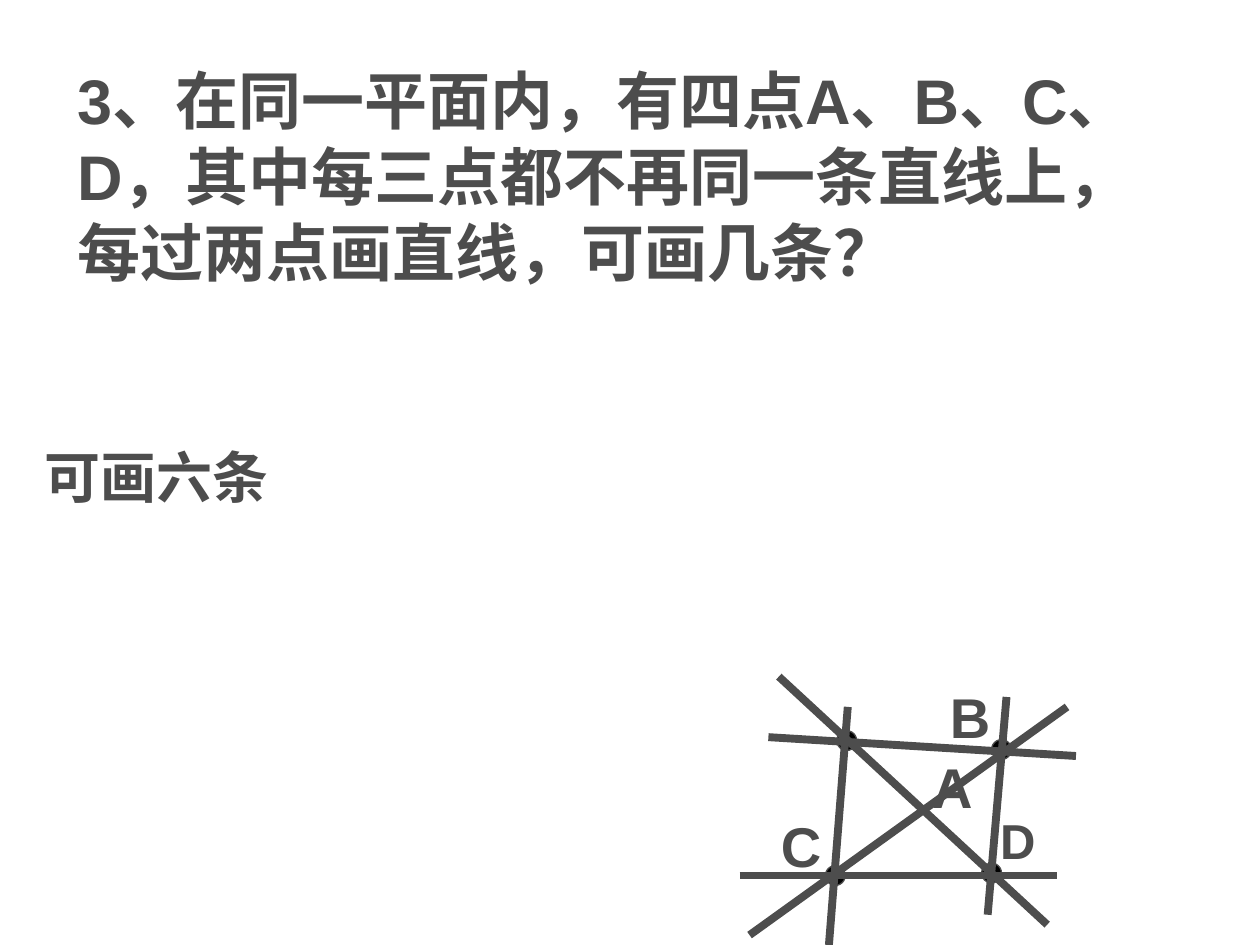
from dataclasses import dataclass

from lxml import etree
from pptx import Presentation
from pptx.dml.color import RGBColor
from pptx.enum.shapes import MSO_CONNECTOR, MSO_SHAPE
from pptx.enum.text import MSO_ANCHOR, MSO_AUTO_SIZE, PP_ALIGN
from pptx.oxml.ns import qn
from pptx.util import Cm, Pt

STRAIGHT = MSO_CONNECTOR.STRAIGHT
OVAL = MSO_SHAPE.OVAL
TOP, BOTTOM = MSO_ANCHOR.TOP, MSO_ANCHOR.BOTTOM
NO_AUTOSIZE = MSO_AUTO_SIZE.NONE
LEFT = PP_ALIGN.LEFT
TITLE_ONLY = 5


@dataclass(frozen=True)
class Theme:
    font: str = "Arial"
    ink: RGBColor = RGBColor(0x4D, 0x4D, 0x4D)
    dot: RGBColor = RGBColor(0, 0, 0)
    question_size: int = 36
    answer_size: int = 32
    label_size: int = 32
    small_label_size: int = 28
    line_width: float = 4.5
    outline_width: float = 0.75


@dataclass(frozen=True)
class Dot:
    left: float
    top: float
    diameter: float = 0.4


@dataclass(frozen=True)
class Label:
    text: str
    left: float
    top: float
    size: int
    width: float = 1.6
    height: float = 1.6


@dataclass(frozen=True)
class Line:
    x1: float
    y1: float
    x2: float
    y2: float


THEME = Theme()

DOTS = [
    Dot(19.79, 17.4),
    Dot(16.64, 17.45),
    Dot(19.99, 14.91),
    Dot(16.87, 14.73),
]

LABELS = [
    Label("C", 15.49, 16.23, THEME.label_size),
    Label("B", 18.9, 13.64, THEME.label_size),
    Label("A", 18.54, 15.04, THEME.label_size, width=1.4),
    Label("D", 19.91, 16.21, THEME.small_label_size, width=2, height=1.45),
]

LINES = [
    Line(17.09, 14.25, 16.71, 19.05),
    Line(14.91, 17.65, 21.31, 17.65),
    Line(15.49, 14.86, 21.69, 15.24),
    Line(20.29, 14.05, 19.91, 18.44),
    Line(15.11, 18.85, 21.51, 14.25),
    Line(15.7, 13.64, 21.11, 18.64),
]


def write_text(box, text: str, *, size: int, anchor=TOP) -> None:
    frame = box.text_frame
    frame.word_wrap = True
    frame.auto_size = NO_AUTOSIZE
    frame.vertical_anchor = anchor
    para = frame.paragraphs[0]
    para.alignment = LEFT
    span = para.add_run()
    span.text = text
    span.font.name = THEME.font
    span.font.size = Pt(size)
    span.font.bold = True
    span.font.color.rgb = THEME.ink


def draw_dot(slide, dot: Dot) -> None:
    shape = slide.shapes.add_shape(
        OVAL, Cm(dot.left), Cm(dot.top), Cm(dot.diameter), Cm(dot.diameter)
    )
    shape.shadow.inherit = False
    shape.fill.solid()
    shape.fill.fore_color.rgb = THEME.dot
    shape.line.color.rgb = THEME.ink
    shape.line.width = Pt(THEME.outline_width)


def draw_label(slide, label: Label) -> None:
    box = slide.shapes.add_textbox(
        Cm(label.left), Cm(label.top), Cm(label.width), Cm(label.height)
    )
    write_text(box, label.text, size=label.size)


def draw_line(slide, line: Line) -> None:
    connector = slide.shapes.add_connector(
        STRAIGHT, Cm(line.x1), Cm(line.y1), Cm(line.x2), Cm(line.y2)
    )
    connector.line.color.rgb = THEME.ink
    connector.line.width = Pt(THEME.line_width)
    etree.SubElement(connector._element.spPr, qn("a:effectLst"))


def main() -> None:
    deck = Presentation()
    deck.slide_width, deck.slide_height = Cm(25.4), Cm(19.05)
    page = deck.slides.add_slide(deck.slide_layouts[TITLE_ONLY])

    question = page.shapes.title
    question.left, question.top = Cm(1.3), Cm(1.12)
    question.width, question.height = Cm(23), Cm(4.83)
    write_text(
        question,
        "3、在同一平面内，有四点A、B、C、D，其中每三点都不再同一条直线上，每过两点画直线，可画几条？",
        size=THEME.question_size,
    )

    for dot in DOTS:
        draw_dot(page, dot)
    for label in LABELS:
        draw_label(page, label)
    for line in LINES:
        draw_line(page, line)

    answer = page.shapes.add_textbox(Cm(0.64), Cm(6.78), Cm(23), Cm(3.63))
    write_text(answer, "可画六条", size=THEME.answer_size, anchor=BOTTOM)

    deck.save("out.pptx")


if __name__ == "__main__":
    main()
